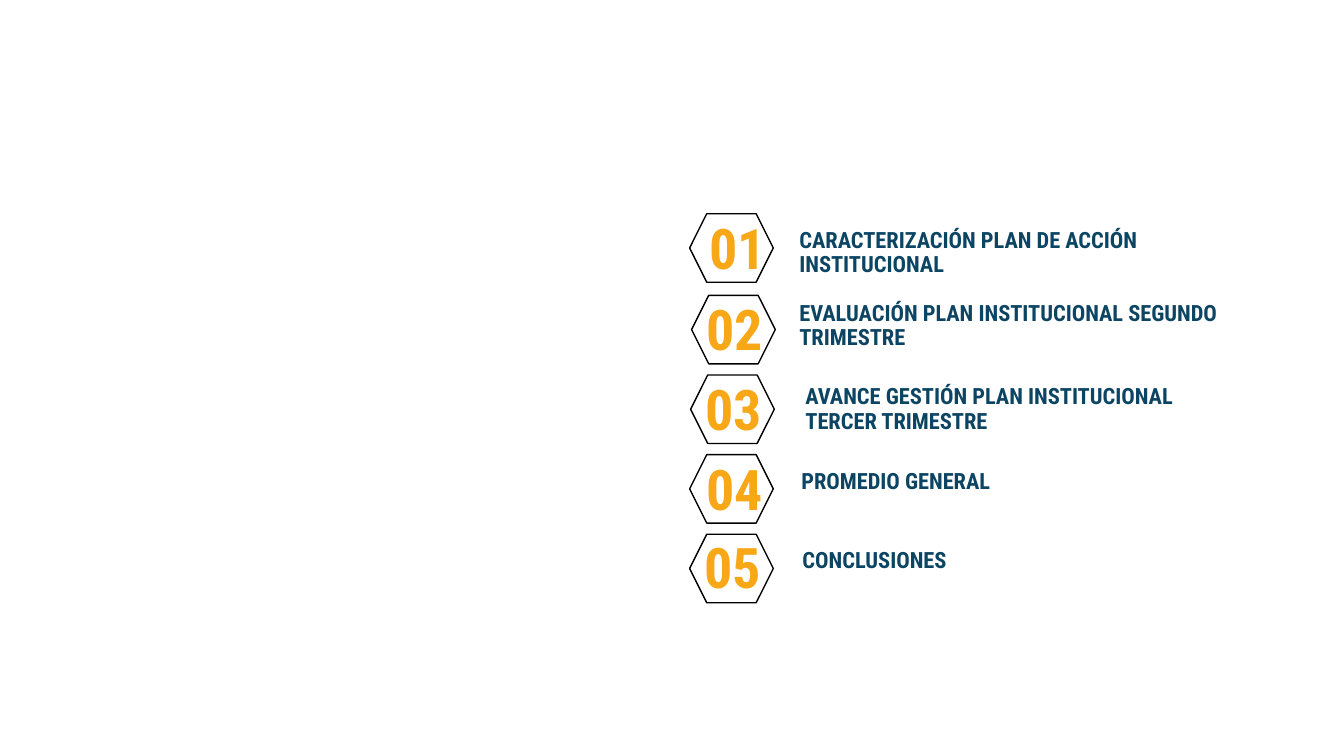
from pptx import Presentation
from pptx.dml.color import RGBColor
from pptx.enum.shapes import MSO_SHAPE as Preset
from pptx.enum.text import MSO_ANCHOR as Anchor, PP_ALIGN as Align
from pptx.util import Inches, Pt

COLORS = {"white": "FFFFFF", "outline": "000000", "number": "F8A816", "topic": "0C4563"}
BOX_HEIGHT = 0.49

AGENDA = [
    ("CARACTERIZACIÓN PLAN DE ACCIÓN INSTITUCIONAL",
     (6.84, 2.12), (6.94, 2.25), (7.83, 2.27), 4.63),
    ("EVALUACIÓN PLAN INSTITUCIONAL SEGUNDO TRIMESTRE",
     (6.86, 2.93), (6.91, 3.05), (7.83, 2.99), 4.52),
    ("AVANCE GESTIÓN PLAN INSTITUCIONAL TERCER TRIMESTRE",
     (6.85, 3.72), (6.9, 3.85), (7.89, 3.82), 4.04),
    ("PROMEDIO GENERAL",
     (6.84, 4.51), (6.91, 4.64), (7.85, 4.54), 4.52),
    ("CONCLUSIONES",
     (6.84, 5.3), (6.89, 5.41), (7.86, 5.32), 4.52),
]


class AgendaSlide:
    """Draws the agenda elements in one style on one slide."""

    def __init__(self, slide, font="Roboto Condensed"):
        self.slide = slide
        self.font = font
        fill = slide.background.fill
        fill.solid()
        fill.fore_color.rgb = self.color("white")

    def color(self, name):
        return RGBColor.from_string(COLORS[name])

    def hexagon(self, left, top):
        shape = self.slide.shapes.add_shape(
            Preset.HEXAGON, Inches(left), Inches(top), Inches(0.83), Inches(0.68))
        shape.shadow.inherit = False
        shape.fill.solid()
        shape.fill.fore_color.rgb = self.color("white")
        shape.line.color.rgb = self.color("outline")
        shape.line.width = Pt(1)

    def text(self, content, left, top, width, size, color):
        box = self.slide.shapes.add_textbox(
            Inches(left), Inches(top), Inches(width), Inches(BOX_HEIGHT))
        frame = box.text_frame
        frame.word_wrap = True
        frame.vertical_anchor = Anchor.MIDDLE
        para = frame.paragraphs[0]
        para.alignment = Align.LEFT
        para.line_spacing = 0.9
        span = para.add_run()
        span.text = content
        span.font.name = self.font
        span.font.size = Pt(size)
        span.font.bold = True
        span.font.color.rgb = self.color(color)


def main():
    deck = Presentation()
    deck.slide_width = Inches(13.33)
    deck.slide_height = Inches(7.5)
    page = AgendaSlide(deck.slides.add_slide(deck.slide_layouts[6]))
    for number, (topic, hexagon_at, number_at, topic_at, topic_width) in enumerate(AGENDA, 1):
        page.hexagon(*hexagon_at)
        page.text(f"{number:02}", *number_at, 0.87, 40, "number")
        page.text(topic, *topic_at, topic_width, 16, "topic")
    deck.save("out.pptx")


if __name__ == "__main__":
    main()
